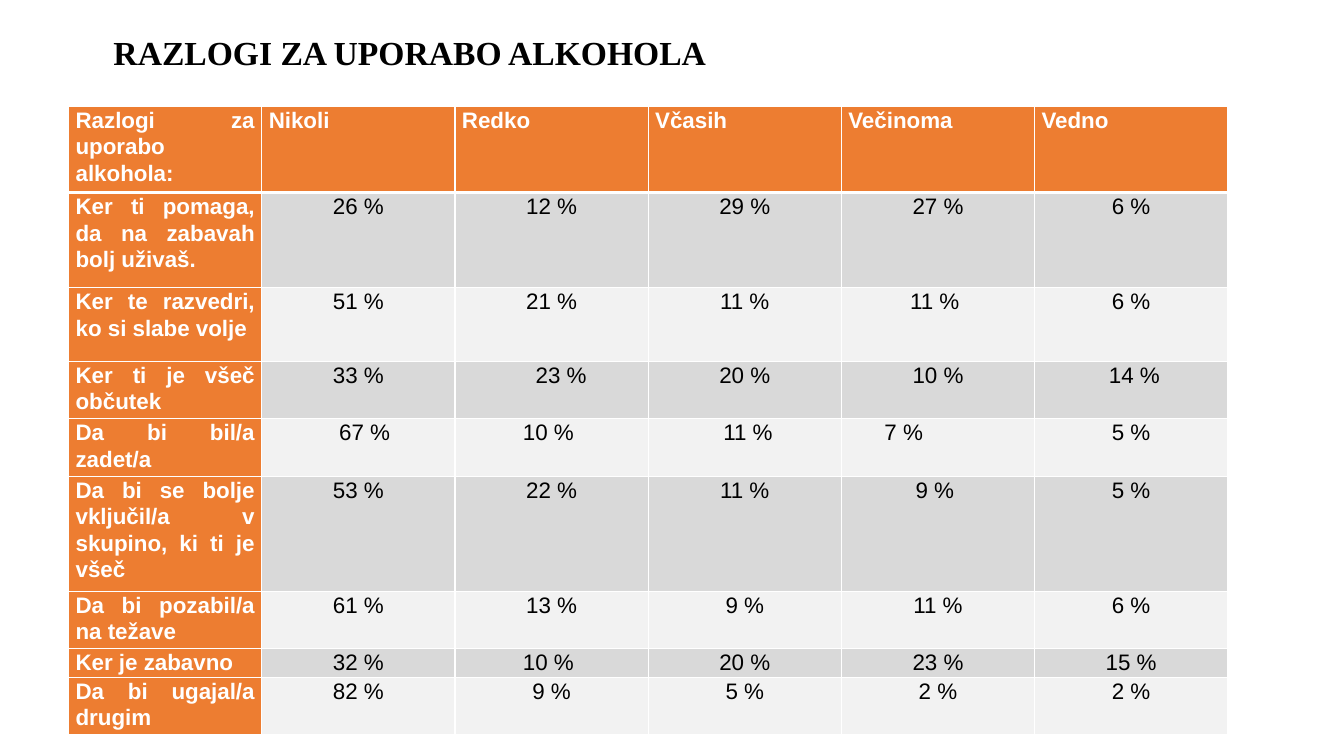
from lxml.etree import SubElement
from pptx import Presentation
from pptx.dml.color import RGBColor
from pptx.enum.text import MSO_ANCHOR, PP_ALIGN
from pptx.oxml.ns import qn
from pptx.util import Pt

REASONS = [
    ("Razlogi za uporabo alkohola:", "Nikoli", "Redko", "Včasih", "Večinoma", "Vedno"),
    ("Ker ti pomaga, da na zabavah bolj uživaš.", 26, 12, 29, 27, 6),
    ("Ker te razvedri, ko si slabe volje", 51, 21, 11, 11, 6),
    ("Ker ti je všeč občutek", 33, 23, 20, 10, 14),
    ("Da bi bil/a zadet/a", 67, 10, 11, 7, 5),
    ("Da bi se bolje vključil/a v skupino, ki ti je všeč", 53, 22, 11, 9, 5),
    ("Da bi pozabil/a na težave", 61, 13, 9, 11, 6),
    ("Ker je zabavno", 32, 10, 20, 23, 15),
    ("Da bi ugajal/a drugim", 82, 9, 5, 2, 2),
]
ROW_HEIGHTS = [56.5, 68, 52.5, 38, 38, 76.5, 38, 19, 38]
COLUMN_WIDTH = 138
NUDGES = {(2, 4): -4.5, (3, 2): 13.5, (3, 5): 4.5, (4, 1): 9, (4, 2): -4.5,
          (4, 3): 4.5, (4, 4): -49, (5, 4): -4.5, (7, 2): -4.5}


def color(code):
    return RGBColor.from_string(code)


def apply(target, values):
    for name, value in values.items():
        setattr(target, name, value)


class SurveySlide:
    """Holds the survey style and the slide that is being built."""

    WHITE, BLACK, ORANGE = "FFFFFF", "000000", "ED7D31"
    BANDS = ("F2F2F2", "D9D9D9")
    TITLE_FONT = {"name": "Times New Roman", "size": Pt(24), "bold": True}
    LABEL_FONT = {"name": "Arial", "size": Pt(16), "bold": True}
    VALUE_FONT = {**LABEL_FONT, "bold": False}
    LABEL_TEXT = {"alignment": PP_ALIGN.JUSTIFY, "line_spacing": 1.07}
    VALUE_TEXT = {**LABEL_TEXT, "alignment": PP_ALIGN.CENTER}

    def __init__(self, slide):
        self.slide = slide

    def wording(self, paragraph, text, layout, font, ink):
        apply(paragraph, layout)
        run = paragraph.add_run()
        run.text = text
        apply(run.font, font)
        run.font.color.rgb = color(ink)

    def title(self, text, left, top, width, height):
        frame = self.slide.shapes.add_textbox(
            Pt(left), Pt(top), Pt(width), Pt(height)).text_frame
        apply(frame, {"word_wrap": True, "vertical_anchor": MSO_ANCHOR.MIDDLE})
        self.wording(frame.paragraphs[0], text, {"line_spacing": 0.9},
                     self.TITLE_FONT, self.BLACK)

    def borders(self, cell, row):
        properties = cell._tc.get_or_add_tcPr()
        widths = {"lnL": 1, "lnR": 1, "lnT": 3 if row == 1 else 1,
                  "lnB": 3 if row == 0 else 1}
        for position, (side, width) in enumerate(widths.items()):
            line = SubElement(properties, qn(f"a:{side}"), w=str(Pt(width)))
            fill = SubElement(line, qn("a:solidFill"))
            SubElement(fill, qn("a:srgbClr"), val=self.WHITE)
            properties.insert(position, line)

    def cell(self, cell, content, row, column):
        is_label = row == 0 or column == 0
        nudge = NUDGES.get((row, column), 0)
        apply(cell, {"margin_left": Pt(5 + max(nudge, 0)),
                     "margin_right": Pt(5 + max(-nudge, 0)),
                     "margin_top": 0, "margin_bottom": 0})
        cell.fill.solid()
        cell.fill.fore_color.rgb = color(self.ORANGE if is_label else self.BANDS[row % 2])
        self.borders(cell, row)
        paragraph = cell.text_frame.paragraphs[0]
        if is_label:
            self.wording(paragraph, content, self.LABEL_TEXT, self.LABEL_FONT, self.WHITE)
        else:
            self.wording(paragraph, f"{content} %", self.VALUE_TEXT, self.VALUE_FONT, self.BLACK)

    def table(self, rows, left, top):
        columns = len(rows[0])
        survey = self.slide.shapes.add_table(
            len(rows), columns, Pt(left), Pt(top),
            Pt(COLUMN_WIDTH * columns), Pt(sum(ROW_HEIGHTS))).table
        for column in survey.columns:
            column.width = Pt(COLUMN_WIDTH)
        for row, (answers, height) in enumerate(zip(rows, ROW_HEIGHTS)):
            survey.rows[row].height = Pt(height)
            for column, content in enumerate(answers):
                self.cell(survey.cell(row, column), content, row, column)


def main():
    deck = Presentation()
    apply(deck, {"slide_width": Pt(960), "slide_height": Pt(540)})
    survey = SurveySlide(deck.slides.add_slide(deck.slide_layouts[6]))
    survey.title("RAZLOGI ZA UPORABO ALKOHOLA", 74, -13, 828, 104.4)
    survey.table(REASONS, 49, 76)
    deck.save("out.pptx")


if __name__ == "__main__":
    main()
